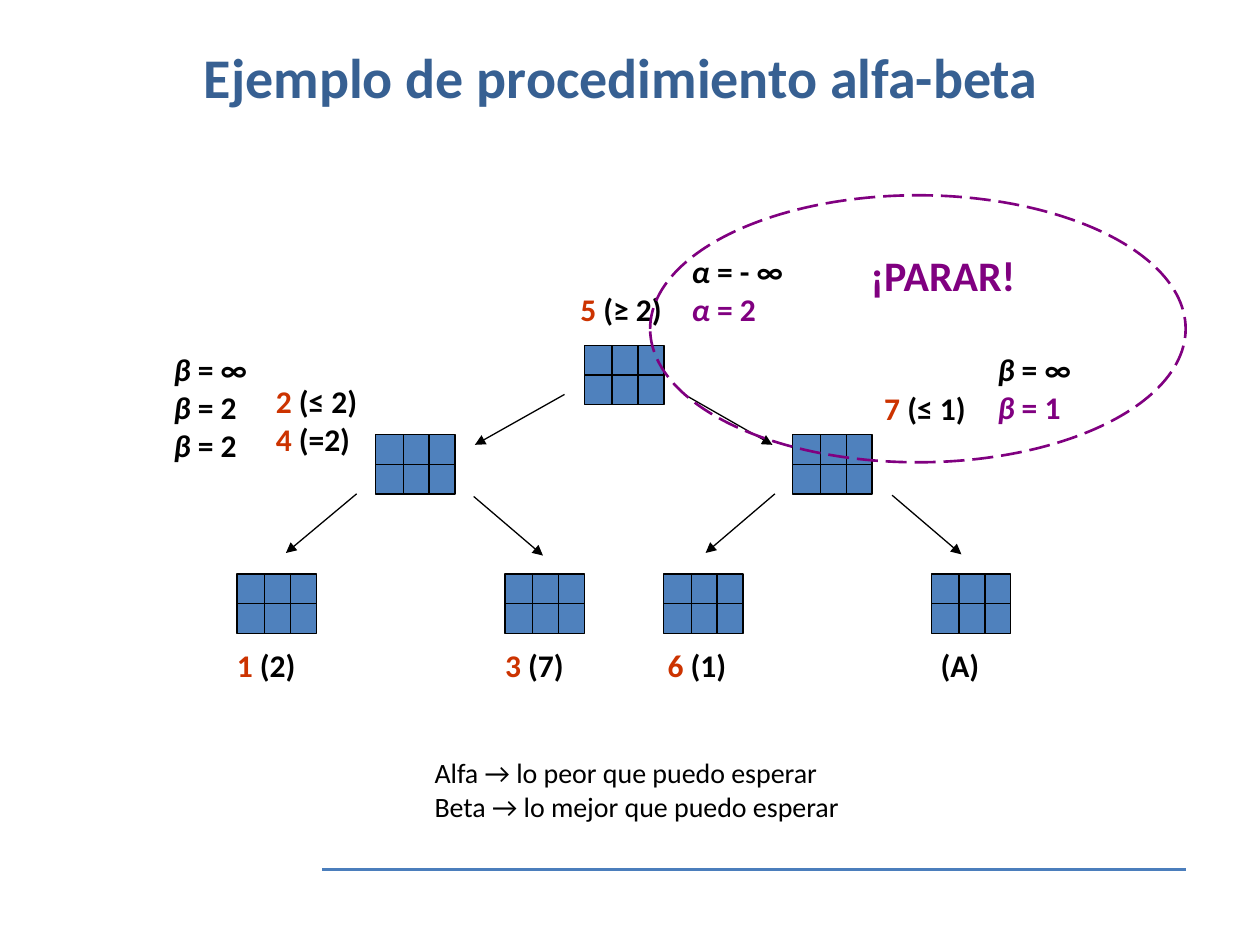
import pptx
import pptx.util
import pptx.dml.color
import pptx.enum.dml
import pptx.enum.shapes
import pptx.enum.text
import pptx.oxml

Pt = pptx.util.Pt
Align = pptx.enum.text.PP_ALIGN
Shape = pptx.enum.shapes.MSO_SHAPE

COLORS = {
    "title": "376092",
    "board": "4F81BD",
    "rule": "4B7EBC",
    "ink": "000000",
    "order": "CC3300",
    "cutoff": "800080",
}


class TreeSlide:
    font = "Calibri"
    board_width = 45.4
    board_height = 34

    def __init__(self, presentation):
        self.slide = presentation.slides.add_slide(presentation.slide_layouts[5])

    def color(self, name):
        return pptx.dml.color.RGBColor.from_string(COLORS[name])

    def style(self, font, size, color, bold):
        font.name = self.font
        font.size = Pt(size)
        font.bold = bold
        font.color.rgb = self.color(color)

    def title(self, text, left, top, width, height):
        shape = self.slide.shapes.title
        shape.left, shape.top = Pt(left), Pt(top)
        shape.width, shape.height = Pt(width), Pt(height)
        frame = shape.text_frame
        frame.text = text
        frame.vertical_anchor = pptx.enum.text.MSO_ANCHOR.MIDDLE
        paragraph = frame.paragraphs[0]
        paragraph.alignment = Align.CENTER
        self.style(paragraph.font, 32, "title", True)

    def label(self, left, top, width, height, lines, size=18, bold=True, align=Align.LEFT):
        box = self.slide.shapes.add_textbox(Pt(left), Pt(top), Pt(width), Pt(height))
        frame = box.text_frame
        frame.word_wrap = True
        for index, runs in enumerate(lines):
            paragraph = frame.paragraphs[0] if index == 0 else frame.add_paragraph()
            paragraph.alignment = align
            self.style(paragraph.font, size, "ink", bold)
            for text, color, italic in runs:
                run = paragraph.add_run()
                run.text = text
                run.font.color.rgb = self.color(color)
                run.font.italic = italic

    def line(self, start, end, color="ink", width=0.75, arrow=False):
        connector = self.slide.shapes.add_connector(
            pptx.enum.shapes.MSO_CONNECTOR.STRAIGHT, *map(Pt, start + end))
        connector.line.color.rgb = self.color(color)
        connector.line.width = Pt(width)
        properties = connector._element.spPr
        if arrow:
            outline = connector.line._get_or_add_ln()
            tail = pptx.oxml.parse_xml(
                '<a:tailEnd xmlns:a="http://schemas.openxmlformats.org/drawingml/2006/main" type="triangle"/>')
            outline.append(tail)
        properties.append(pptx.oxml.parse_xml(
            '<a:effectLst xmlns:a="http://schemas.openxmlformats.org/drawingml/2006/main"/>'))

    def board(self, left, top):
        width, height = self.board_width, self.board_height
        shape = self.slide.shapes.add_shape(
            Shape.RECTANGLE, Pt(left), Pt(top), Pt(width), Pt(height))
        shape.shadow.inherit = False
        shape.fill.solid()
        shape.fill.fore_color.rgb = self.color("board")
        shape.line.color.rgb = self.color("ink")
        shape.line.width = Pt(0.75)
        for offset in (15.8, 30.6):
            self.line((left + offset, top), (left + offset, top + height))
        self.line((left, top + height / 2), (left + width, top + height / 2))

    def dashed_ellipse(self, left, top, width, height):
        shape = self.slide.shapes.add_shape(
            Shape.OVAL, Pt(left), Pt(top), Pt(width), Pt(height))
        shape.shadow.inherit = False
        shape.fill.background()
        shape.line.color.rgb = self.color("cutoff")
        shape.line.width = Pt(1.5)
        shape.line.dash_style = pptx.enum.dml.MSO_LINE.LONG_DASH


def step(order, value):
    return [(order, "order", False), (f" ({value})", "ink", False)]


def bound(symbol, value, color="ink"):
    return [(symbol, color, True), (f" = {value}", color, False)]


def plain(text, color="ink"):
    return [(text, color, False)]


def main():
    presentation = pptx.Presentation()
    presentation.slide_width, presentation.slide_height = Pt(720), Pt(540)
    tree = TreeSlide(presentation)

    tree.line((184.3, 496.8), (677.5, 496.8), "rule", 1.5)
    tree.title("Ejemplo de procedimiento alfa-beta", 31, 15.8, 648, 55.4)

    for left, order, value in ((128.2, "1", "2"), (281.5, "3", "7"), (374.4, "6", "1")):
        tree.label(left, 365.8, 51.8, 29, [step(order, value)])
    tree.label(530.4, 365.8, 44, 29, [plain("(A)")])
    tree.label(150.5, 214.6, 66.2, 50.4, [step("2", "≤ 2"), step("4", "=2")])
    tree.label(498.2, 218.9, 66.2, 29, [step("7", "≤ 1")])
    tree.label(321.8, 162, 66.2, 29, [step("5", "≥ 2")], align=Align.CENTER)

    root = [(334, 197.3)]
    middle = [(left, 248.4) for left in (214.6, 453)]
    leaves = [(left, 328) for left in (135.4, 288.6, 379.2, 532.2)]
    for left, top in root + middle + leaves:
        tree.board(left, top)

    arrows = [
        ((322.6, 225.4), (271.4, 254.2)),
        ((391, 225.4), (441.4, 254.2)),
        ((203.8, 282.2), (163.4, 316)),
        ((270.7, 283.7), (310.3, 317.5)),
        ((442.8, 282.2), (403.2, 316)),
        ((509.8, 283), (549.4, 316.8)),
    ]
    for start, end in arrows:
        tree.line(start, end, arrow=True)

    tree.label(92.2, 196.6, 57.6, 72,
               [bound("β", "∞"), bound("β", "2"), bound("β", "2")])
    tree.label(388.1, 140.4, 70.6, 50.4,
               [bound("α", "- ∞"), bound("α", "2", "cutoff")])
    tree.label(563, 196.6, 57.6, 50.4,
               [bound("β", "∞"), bound("β", "1", "cutoff")])
    tree.label(490.3, 139, 115.9, 36, [plain("¡PARAR!", "cutoff")], size=24)
    tree.dashed_ellipse(371.5, 111.6, 306, 152.6)

    tree.label(241.2, 428.4, 250.6, 46,
               [plain("Alfa → lo peor que puedo esperar"),
                plain("Beta → lo mejor que puedo esperar")], size=16, bold=False)

    presentation.save("out.pptx")


if __name__ == "__main__":
    main()
